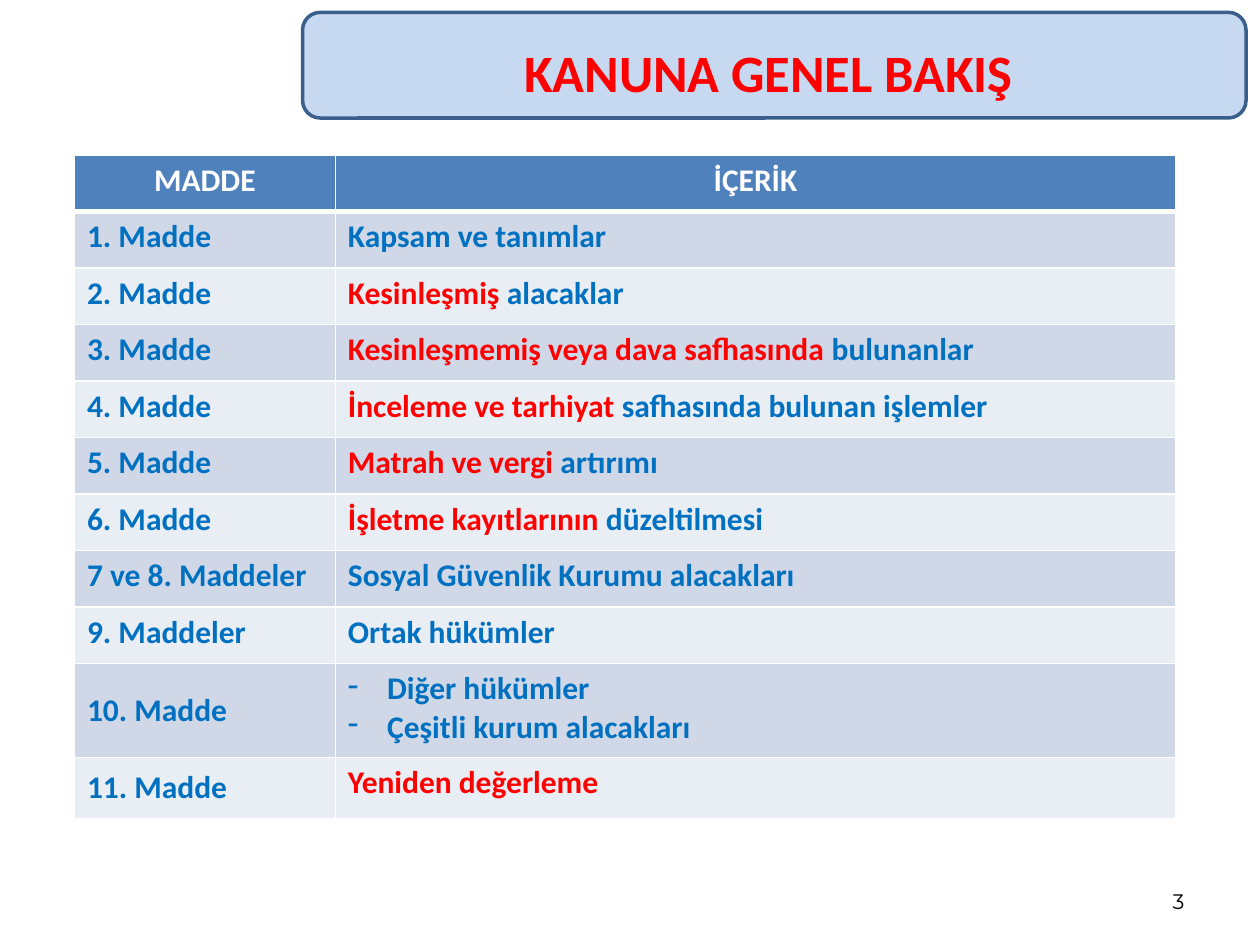
"""Build the overview slide that lists the articles of the law."""
import lxml.etree
import pptx
import pptx.dml.color
import pptx.enum.shapes
import pptx.enum.text
import pptx.oxml
import pptx.oxml.ns
import pptx.util

Cm = pptx.util.Cm
Pt = pptx.util.Pt
RGBColor = pptx.dml.color.RGBColor
ALIGN = pptx.enum.text.PP_ALIGN
MIDDLE = pptx.enum.text.MSO_ANCHOR.MIDDLE
TOP = pptx.enum.text.MSO_ANCHOR.TOP

WHITE = RGBColor(0xFF, 0xFF, 0xFF)
BLACK = RGBColor(0x00, 0x00, 0x00)
RED = RGBColor(0xFF, 0x00, 0x00)
BLUE = RGBColor(0x00, 0x70, 0xC0)
BANNER_FILL = RGBColor(0xC6, 0xD9, 0xF1)
BANNER_LINE = RGBColor(0x3A, 0x5F, 0x8C)
HEADER_FILL = RGBColor(0x4F, 0x81, 0xBD)
BAND_FILLS = (RGBColor(0xD0, 0xD8, 0xE8), RGBColor(0xE9, 0xED, 0xF4))

TITLE_FORMAT = {"name": "Calibri", "size": Pt(30), "bold": True}
TABLE_FORMAT = {"name": "Calibri", "size": Pt(18), "bold": True}
NUMBER_FORMAT = {"name": "Montserrat", "size": Pt(12), "bold": False}

COLUMN_WIDTHS = (Cm(5.26), Cm(16.94))
ROW_HEIGHT, LIST_HEIGHT, LAST_HEIGHT = Cm(1.14), Cm(1.9), Cm(1.23)
HEADERS = ("MADDE", "İÇERİK")
ARTICLES = (
    ("1. Madde", [("Kapsam ve tanımlar", BLUE)]),
    ("2. Madde", [("Kesinleşmiş ", RED), ("alacaklar", BLUE)]),
    ("3. Madde", [("Kesinleşmemiş veya dava safhasında ", RED), ("bulunanlar", BLUE)]),
    ("4. Madde", [("İnceleme ve tarhiyat ", RED), ("safhasında bulunan işlemler", BLUE)]),
    ("5. Madde", [("Matrah ve vergi ", RED), ("artırımı", BLUE)]),
    ("6. Madde", [("İşletme kayıtlarının ", RED), ("düzeltilmesi", BLUE)]),
    ("7 ve 8. Maddeler", [("Sosyal Güvenlik Kurumu alacakları", BLUE)]),
    ("9. Maddeler", [("Ortak hükümler", BLUE)]),
)
OTHER_PROVISIONS = ("Diğer hükümler", "Çeşitli kurum alacakları ")


def write_paragraph(para, spans, text_format, align=ALIGN.LEFT):
    """Write coloured spans of text into a paragraph."""
    para.alignment = align
    for text, color in spans:
        span = para.add_run()
        span.text = text
        for name, value in text_format.items():
            setattr(span.font, name, value)
        span.font.color.rgb = color


def add_dash(para):
    """Give a paragraph a hanging dash bullet."""
    properties = para._p.get_or_add_pPr()
    properties.set("marL", str(Cm(0.79)))
    properties.set("indent", str(Cm(-0.79)))
    bullet = lxml.etree.SubElement(properties, pptx.oxml.ns.qn("a:buChar"))
    bullet.set("char", "-")


def add_banner(slide):
    """Add the rounded panel behind the title."""
    banner = slide.shapes.add_shape(
        pptx.enum.shapes.MSO_SHAPE.ROUNDED_RECTANGLE,
        Cm(6.1), Cm(0.25), Cm(19.02), Cm(2.13))
    banner.shadow.inherit = False
    banner.fill.solid()
    banner.fill.fore_color.rgb = BANNER_FILL
    banner.line.color.rgb = BANNER_LINE
    banner.line.width = Pt(2)


def add_text(slide, place, text, color, text_format, align):
    """Add a text box with one vertically centred line."""
    box = slide.shapes.add_textbox(*place)
    box.text_frame.word_wrap = True
    box.text_frame.vertical_anchor = MIDDLE
    write_paragraph(box.text_frame.paragraphs[0], [(text, color)], text_format, align)


def style_cell(cell, fill, top=1, bottom=1):
    """Set the white borders and the fill of a cell."""
    properties = cell._tc.get_or_add_tcPr()
    for side, width in (("L", 1), ("R", 1), ("T", top), ("B", bottom)):
        properties.append(pptx.oxml.parse_xml(
            f'<a:ln{side} {pptx.oxml.ns.nsdecls("a")} w="{Pt(width)}">'
            f'<a:solidFill><a:srgbClr val="{WHITE}"/></a:solidFill></a:ln{side}>'))
    cell.fill.solid()
    cell.fill.fore_color.rgb = fill


def fill_row(table, index, label, paragraphs, align=ALIGN.LEFT, anchor=TOP, dashed=False):
    """Fill one article row, shaded by its position."""
    label_cell, content_cell = table.cell(index, 0), table.cell(index, 1)
    for cell in (label_cell, content_cell):
        style_cell(cell, BAND_FILLS[(index - 1) % 2], top=3 if index == 1 else 1)
    label_cell.vertical_anchor = anchor
    write_paragraph(label_cell.text_frame.paragraphs[0], [(label, BLUE)], TABLE_FORMAT)
    frame = content_cell.text_frame
    for number, spans in enumerate(paragraphs):
        para = frame.add_paragraph() if number else frame.paragraphs[0]
        if dashed:
            add_dash(para)
        write_paragraph(para, spans, TABLE_FORMAT, align)


def add_article_table(slide):
    """Add the table of articles and their content."""
    heights = [ROW_HEIGHT] * (len(ARTICLES) + 1) + [LIST_HEIGHT, LAST_HEIGHT]
    table = slide.shapes.add_table(
        len(heights), len(COLUMN_WIDTHS), Cm(1.5), Cm(3.12),
        sum(COLUMN_WIDTHS), sum(heights)).table
    for column, width in zip(table.columns, COLUMN_WIDTHS):
        column.width = width
    for row, height in zip(table.rows, heights):
        row.height = height
    for column, header in enumerate(HEADERS):
        cell = table.cell(0, column)
        style_cell(cell, HEADER_FILL, bottom=3)
        write_paragraph(cell.text_frame.paragraphs[0], [(header, WHITE)],
                        TABLE_FORMAT, ALIGN.CENTER)
    for index, (label, spans) in enumerate(ARTICLES, start=1):
        fill_row(table, index, label, [spans])
    list_row = len(ARTICLES) + 1
    fill_row(table, list_row, "10. Madde", [[(text, BLUE)] for text in OTHER_PROVISIONS],
             ALIGN.JUSTIFY, MIDDLE, dashed=True)
    fill_row(table, list_row + 1, "11. Madde", [[("Yeniden değerleme", RED)]],
             ALIGN.JUSTIFY, MIDDLE)


def main():
    """Build and save the deck."""
    deck = pptx.Presentation()
    deck.slide_width, deck.slide_height = Cm(25.4), Cm(19.05)
    slide = deck.slides.add_slide(deck.slide_layouts[6])
    add_banner(slide)
    add_text(slide, (Cm(6.71), Cm(0.74), Cm(17.81), Cm(1.4)),
             "KANUNA GENEL BAKIŞ ", RED, TITLE_FORMAT, ALIGN.CENTER)
    add_text(slide, (Cm(18.21), Cm(17.65), Cm(5.92), Cm(1.02)),
             "3", BLACK, NUMBER_FORMAT, ALIGN.RIGHT)
    add_article_table(slide)
    deck.save("out.pptx")


if __name__ == "__main__":
    main()
